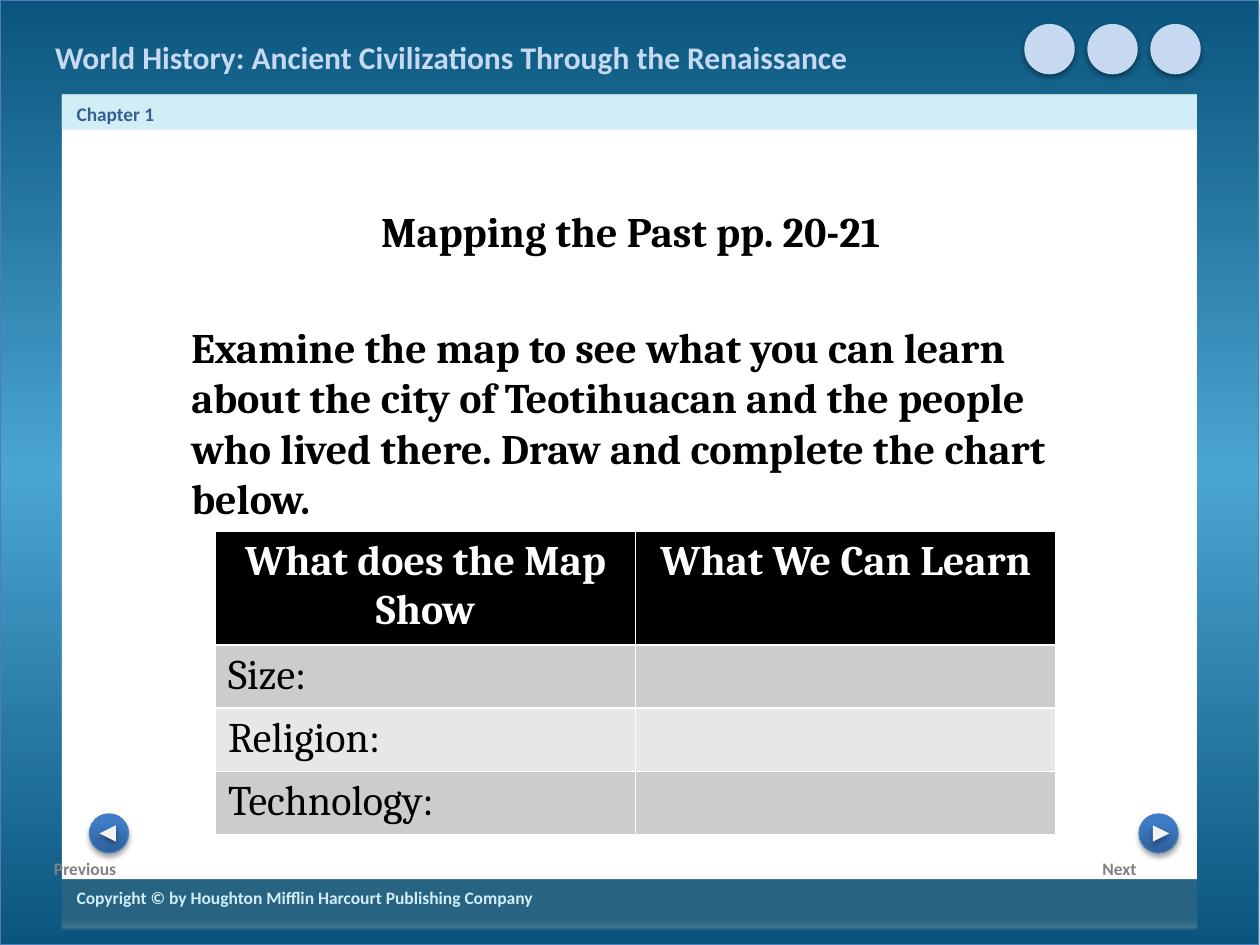
import pptx
import pptx.dml.color
import pptx.enum.shapes
import pptx.enum.text
import pptx.oxml
import pptx.oxml.ns
import pptx.util
from pptx.util import Inches

RGBColor = pptx.dml.color.RGBColor
MSO_SHAPE = pptx.enum.shapes.MSO_SHAPE
PP_ALIGN = pptx.enum.text.PP_ALIGN
qn = pptx.oxml.ns.qn

BLACK = RGBColor(0x00, 0x00, 0x00)
WHITE = RGBColor(0xFF, 0xFF, 0xFF)
DEEP_BLUE = RGBColor(0x0A, 0x55, 0x7D)
SKY_BLUE = RGBColor(0x4B, 0xA5, 0xD2)
OUTLINE_BLUE = RGBColor(0x4B, 0x7E, 0xBC)
PALE_AQUA = RGBColor(0xD1, 0xED, 0xF5)
FOOTER_BLUE = RGBColor(0x28, 0x64, 0x82)
PALE_BLUE = RGBColor(0xC6, 0xD9, 0xF1)
CHAPTER_BLUE = RGBColor(0x37, 0x60, 0x92)
LABEL_GREY = RGBColor(0x80, 0x80, 0x80)
ARROW_GREY = RGBColor(0xF2, 0xF2, 0xF2)
BAND_DARK = RGBColor(0xCC, 0xCC, 0xCC)
BAND_LIGHT = RGBColor(0xE7, 0xE7, 0xE7)

# Gradient stops: position %, colour, opacity %
BACKDROP_STOPS = [(0, DEEP_BLUE, 100), (50, SKY_BLUE, 100), (100, DEEP_BLUE, 100)]
BUTTON_STOPS = [(0, RGBColor(0x2F, 0x5F, 0x99), 100),
                (80, RGBColor(0x3D, 0x7C, 0xC7), 100),
                (100, RGBColor(0x3A, 0x7C, 0xCB), 100)]
SHEEN_STOPS = [(0, RGBColor(0x9A, 0xAF, 0xC1), 20),
               (100, RGBColor(0xE2, 0xE7, 0xEB), 0)]


def set_gradient(shape, stops):
    """Fill with a gradient that runs from bottom to top."""
    shape.fill.gradient()
    shape.fill.gradient_angle = 90
    stop_list = shape._element.spPr.find(qn("a:gradFill")).find(qn("a:gsLst"))
    for old_stop in list(stop_list):
        stop_list.remove(old_stop)
    for position, color, opacity in stops:
        stop_list.append(pptx.oxml.parse_xml(
            f'<a:gs {pptx.oxml.ns.nsdecls("a")} pos="{position * 1000}">'
            f'<a:srgbClr val="{color}"><a:alpha val="{opacity * 1000}"/>'
            '</a:srgbClr></a:gs>'))


def add_shadow(shape, opacity, distance):
    effects = shape._element.spPr.find(qn("a:effectLst"))
    effects.append(pptx.oxml.parse_xml(
        f'<a:outerShdw {pptx.oxml.ns.nsdecls("a")} blurRad="{pptx.util.Pt(3.1)}" '
        f'dist="{pptx.util.Pt(distance)}" dir="5400000" rotWithShape="0">'
        f'<a:srgbClr val="{BLACK}"><a:alpha val="{opacity * 1000}"/></a:srgbClr>'
        '</a:outerShdw>'))


def add_panel(slide, box, fill, preset=MSO_SHAPE.RECTANGLE, outlined=False):
    """Add a shape; fill is one colour or a list of gradient stops."""
    panel = slide.shapes.add_shape(preset, *map(Inches, box))
    panel.shadow.inherit = False
    if isinstance(fill, RGBColor):
        panel.fill.solid()
        panel.fill.fore_color.rgb = fill
    else:
        set_gradient(panel, fill)
    if outlined:
        panel.line.color.rgb = OUTLINE_BLUE
        panel.line.width = pptx.util.Pt(0.75)
    else:
        panel.line.fill.background()
    return panel


def write(frame, text, size, color, font="Calibri", bold=True, align=PP_ALIGN.LEFT):
    frame.word_wrap = True
    paragraph = frame.paragraphs[0]
    paragraph.text = text
    paragraph.alignment = align
    paragraph.font.name = font
    paragraph.font.size = pptx.util.Pt(size)
    paragraph.font.bold = bold
    paragraph.font.color.rgb = color


def add_label(slide, box, *text_style, **options):
    label = slide.shapes.add_textbox(*map(Inches, box))
    write(label.text_frame, *text_style, **options)


def add_backdrop(slide, box):
    backdrop = add_panel(slide, box, BACKDROP_STOPS, outlined=True)
    add_shadow(backdrop, 35, 1.8)


def add_page(slide, box):
    """White page with its chapter strip above and copyright strip below."""
    left, top, width, height = box
    add_panel(slide, box, WHITE)
    add_panel(slide, (left, top, width, 0.28), PALE_AQUA)
    footer_top = top + height
    add_panel(slide, (left, footer_top, width, 0.4), FOOTER_BLUE)
    add_panel(slide, (left, footer_top + 0.33, width, 0.05), SHEEN_STOPS)
    add_label(slide, (left + 0.02, footer_top + 0.01, width, 0.33),
              "Copyright © by Houghton Mifflin Harcourt Publishing Company", 10, PALE_AQUA)
    add_label(slide, (left + 0.02, top + 0.01, width, 0.26), "Chapter 1", 11, CHAPTER_BLUE)


def add_header(slide, box):
    left, top, width, height = box
    add_label(slide, (left, top + 0.06, 6.86, 0.42),
              "World History: Ancient Civilizations Through the Renaissance", 18, PALE_BLUE)
    diameter, pitch = 0.4, 0.5
    for index in range(3):
        circle_left = left + width - diameter - index * pitch
        circle = add_panel(slide, (circle_left, top, diameter, diameter),
                           PALE_BLUE, MSO_SHAPE.OVAL)
        add_shadow(circle, 38, 1.6)


def add_navigation(slide, box, caption, button_left, arrow_left, rotation):
    left, top, width, height = box
    add_label(slide, (left, top + 0.3, width, 0.26), caption, 10, LABEL_GREY)
    button = add_panel(slide, (button_left, top, 0.31, 0.31), BUTTON_STOPS,
                       MSO_SHAPE.OVAL, outlined=True)
    add_shadow(button, 35, 1.8)
    arrow = add_panel(slide, (arrow_left, top + 0.09, 0.13, 0.13), ARROW_GREY,
                      MSO_SHAPE.ISOSCELES_TRIANGLE)
    arrow.rotation = rotation
    add_shadow(arrow, 38, 1.6)


def add_assignment(slide, box):
    left, top, width, height = box
    add_label(slide, (left, top, width, 0.5), "Mapping the Past pp. 20-21",
              24, BLACK, font="Cambria", align=PP_ALIGN.CENTER)
    add_label(slide, (left + 0.25, top + 0.92, 7.25, height - 0.92),
              "Examine the map to see what you can learn about the city of Teotihuacan "
              "and the people who lived there. Draw and complete the chart below.",
              24, BLACK, font="Cambria")


def add_map_chart(slide, box):
    rows = [("What does the Map Show", "What We Can Learn"),
            ("Size:", ""), ("Religion:", ""), ("Technology:", "")]
    table = slide.shapes.add_table(len(rows), 2, *map(Inches, box)).table
    for row_index, row in enumerate(rows):
        is_header = row_index == 0
        band = BAND_DARK if row_index % 2 else BAND_LIGHT
        for column_index, text in enumerate(row):
            cell = table.cell(row_index, column_index)
            cell.fill.solid()
            cell.fill.fore_color.rgb = BLACK if is_header else band
            write(cell.text_frame, text, 24, WHITE if is_header else BLACK,
                  font="Cambria", bold=is_header,
                  align=PP_ALIGN.CENTER if is_header else PP_ALIGN.LEFT)


def main():
    presentation = pptx.Presentation()
    presentation.slide_width = Inches(10)
    presentation.slide_height = Inches(7.5)
    slide = presentation.slides.add_slide(presentation.slide_layouts[6])
    add_backdrop(slide, (0, 0, 9.99, 7.5))
    add_page(slide, (0.49, 0.75, 9.01, 6.23))
    add_header(slide, (0.34, 0.19, 9.19, 0.5))
    add_navigation(slide, (8.65, 6.46, 1.08, 0.56), "Next", 9.04, 9.15, 90)
    add_navigation(slide, (0.33, 6.46, 1.08, 0.56), "Previous", 0.71, 0.79, 270)
    add_assignment(slide, (1.17, 1.58, 7.67, 2.64))
    add_map_chart(slide, (1.71, 4.22, 6.67, 1.62))
    presentation.save("out.pptx")


if __name__ == "__main__":
    main()
